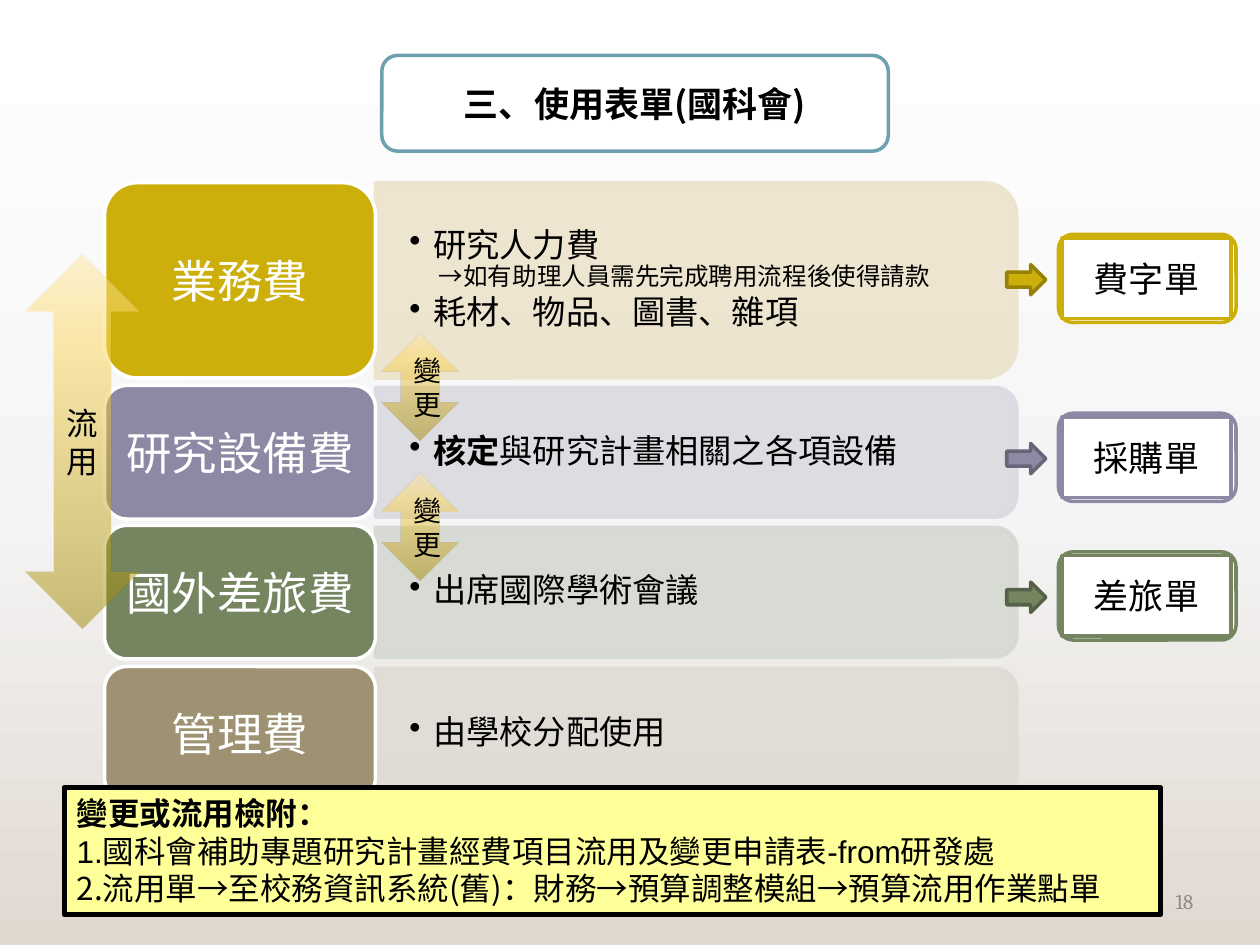
from dataclasses import dataclass

from lxml import etree
from pptx import Presentation
from pptx.dml.color import RGBColor
from pptx.enum.shapes import MSO_SHAPE
from pptx.enum.text import MSO_ANCHOR, PP_ALIGN
from pptx.oxml.ns import qn
from pptx.util import Inches, Pt

ROUNDED = MSO_SHAPE.ROUNDED_RECTANGLE
ROUND_TOP = MSO_SHAPE.ROUND_2_SAME_RECTANGLE
RECTANGLE = MSO_SHAPE.RECTANGLE
RIGHT_ARROW = MSO_SHAPE.RIGHT_ARROW
UP_DOWN_ARROW = MSO_SHAPE.UP_DOWN_ARROW
TOP, MIDDLE = MSO_ANCHOR.TOP, MSO_ANCHOR.MIDDLE
LEFT, CENTER, RIGHT = PP_ALIGN.LEFT, PP_ALIGN.CENTER, PP_ALIGN.RIGHT
BREAK = "\n"


@dataclass(frozen=True)
class Theme:
    cjk: str = "Noto Sans CJK SC"
    latin: str = "Arial"
    serif: str = "Cambria"
    black: str = "000000"
    white: str = "FFFFFF"
    title_line: str = "6EA0B0"
    note_fill: str = "FFFF99"
    page_gray: str = "8C8C8C"
    background: tuple = ((0, "FFFFFF", 100), (55, "F4F4F4", 100), (100, "E1D8D0", 100))
    transfer: tuple = ((0, "9E8700", 50), (75, "FFD757", 50), (100, "FFE7A5", 50))
    label_size: float = 26
    form_size: float = 20
    body_size: float = 19
    note_size: float = 18
    change_size: float = 16
    detail_size: float = 14
    page_size: float = 12


@dataclass(frozen=True)
class Run:
    text: str
    size: float
    font: str = Theme.cjk
    color: str = Theme.black
    bold: bool = False


class SlideBuilder:
    def __init__(self, slide, theme):
        self.slide = slide
        self.theme = theme

    def gradient(self, fill, parent, stops, angle):
        """Give a fill its own stops of position, colour and opacity in percent."""
        fill.gradient()
        fill.gradient_angle = angle
        stop_list = parent.find(".//" + qn("a:gsLst"))
        for stop in list(stop_list):
            stop_list.remove(stop)
        for position, color, opacity in stops:
            stop = etree.SubElement(stop_list, qn("a:gs"), pos=str(position * 1000))
            value = etree.SubElement(stop, qn("a:srgbClr"), val=color)
            if opacity < 100:
                etree.SubElement(value, qn("a:alpha"), val=str(opacity * 1000))

    def background(self):
        self.gradient(self.slide.background.fill, self.slide.element,
                      self.theme.background, 270)

    def shape(self, kind, box, fill, line, width=2):
        shape = self.slide.shapes.add_shape(kind, *map(Inches, box))
        shape.shadow.inherit = False
        shape.fill.solid()
        shape.fill.fore_color.rgb = RGBColor.from_string(fill)
        shape.line.color.rgb = RGBColor.from_string(line)
        shape.line.width = Pt(width)
        return shape

    def panel(self, box, color):
        """Draw a translucent panel that is rounded on its right side."""
        left, top, width, height = box
        turned = (left + (width - height) / 2, top + (height - width) / 2, height, width)
        shape = self.shape(ROUND_TOP, turned, color, color)
        shape.rotation = 90
        for value in shape.element.spPr.iter(qn("a:srgbClr")):
            etree.SubElement(value, qn("a:alpha"), val="90000")

    def transfer_arrow(self, box, text, size):
        arrow = self.slide.shapes.add_shape(UP_DOWN_ARROW, *map(Inches, box))
        arrow.shadow.inherit = False
        self.gradient(arrow.fill, arrow.element.spPr, self.theme.transfer, 90)
        arrow.line.fill.background()
        self.set_text(arrow, [[Run(text, size)]])

    def text_box(self, box, paragraphs, **style):
        shape = self.slide.shapes.add_textbox(*map(Inches, box))
        self.set_text(shape, paragraphs, **style)

    def set_text(self, shape, paragraphs, align=CENTER, anchor=MIDDLE,
                 insets=(0.1, 0.05), bullets=False):
        frame = shape.text_frame
        frame.word_wrap = True
        frame.vertical_anchor = anchor
        frame.margin_left = frame.margin_right = Inches(insets[0])
        frame.margin_top = frame.margin_bottom = Inches(insets[1])
        for index, runs in enumerate(paragraphs):
            paragraph = frame.add_paragraph() if index else frame.paragraphs[0]
            paragraph.alignment = align
            if bullets:
                self.bullet(paragraph)
            for item in runs:
                if item == BREAK:
                    paragraph.add_line_break()
                else:
                    self.add_text_run(paragraph, item)

    def bullet(self, paragraph):
        paragraph.line_spacing = 0.9
        paragraph.space_after = Pt(3)
        properties = paragraph._p.get_or_add_pPr()
        properties.set("marL", str(Inches(0.19)))
        properties.set("indent", str(-Inches(0.19)))
        etree.SubElement(properties, qn("a:buChar"), char="•")

    def add_text_run(self, paragraph, item):
        run = paragraph.add_run()
        run.text = item.text
        run.font.size = Pt(item.size)
        run.font.bold = item.bold
        run.font.name = item.font
        run.font.color.rgb = RGBColor.from_string(item.color)
        etree.SubElement(run._r.get_or_add_rPr(), qn("a:ea"), typeface=self.theme.cjk)

    def budget_row(self, top, height, color, tint, label, body):
        theme = self.theme
        inset = 0 if height > 1.5 else 0.015
        self.panel((2.98, top + inset, 5.09, height - 2 * inset), tint)
        self.text_box((2.98, top, 5.04, height), body,
                      align=LEFT, insets=(0.27, 0.1), bullets=True)
        shape = self.shape(ROUNDED, (0.83, top, 2.15, height), color, theme.white)
        self.set_text(shape, [[Run(label, theme.label_size, color=theme.white)]],
                      insets=(0, 0))

    def form(self, top, color, arrow_line, name):
        theme = self.theme
        self.shape(ROUNDED, (8.4, top, 1.41, 0.7), theme.white, color)
        card = self.shape(RECTANGLE, (8.43, top + 0.03, 1.34, 0.64), theme.white, color)
        self.set_text(card, [[Run(name, theme.form_size)]])
        self.shape(RIGHT_ARROW, (7.99, top + 0.24, 0.31, 0.24), color, arrow_line)


def main():
    presentation = Presentation()
    presentation.slide_width, presentation.slide_height = Inches(10), Inches(7.5)
    slide = presentation.slides.add_slide(presentation.slide_layouts[6])
    theme = Theme()
    builder = SlideBuilder(slide, theme)
    builder.background()

    body, note = theme.body_size, theme.note_size
    rows = [
        (1.45, 1.55, "CCAF0A", "ECE3CC", "業務費",
         [[Run("研究人力費", body), BREAK,
           Run(" →如有助理人員需先完成聘用流程後使得請款", theme.detail_size)],
          [Run("耗材、物品、圖書、雜項", body)]]),
        (3.06, 1.06, "8D89A4", "DBDAE0", "研究設備費",
         [[Run("核定", body, bold=True), Run("與研究計畫相關之各項設備", body)]]),
        (4.17, 1.06, "748560", "D6D9D2", "國外差旅費", [[Run("出席國際學術會議", body)]]),
        (5.29, 1.06, "9E9273", "DFDCD5", "管理費", [[Run("由學校分配使用", body)]]),
    ]
    for row in rows:
        builder.budget_row(*row)

    forms = [
        (1.86, "CCAF0A", "978107", "費字單"),
        (3.28, "8D89A4", "686579", "採購單"),
        (4.38, "748560", "566247", "差旅單"),
    ]
    for form in forms:
        builder.form(*form)

    builder.transfer_arrow((0.2, 2.02, 0.91, 2.97), "流用", note)
    note_box = builder.shape(RECTANGLE, (0.51, 6.25, 8.7, 1.01),
                             theme.note_fill, theme.black, 3)
    builder.set_text(note_box, [
        [Run("變更或流用檢附：", note, theme.latin, bold=True), BREAK,
         Run("1.國科會補助專題研究計畫經費項目流用及變更申請表-from研發處", note, theme.latin)],
        [Run("2.流用單→至校務資訊系統(舊)：財務→預算調整模組→預算流用作業點單", note)],
    ], align=LEFT, anchor=TOP)

    for top in (2.65, 3.76):
        builder.transfer_arrow((3.03, top, 0.61, 0.85), "變更", theme.change_size)

    title = builder.shape(ROUNDED, (3.03, 0.44, 4.02, 0.76), theme.white, theme.title_line)
    builder.set_text(title, [[Run("三、使用表單(國科會)", theme.form_size, bold=True)]])
    builder.text_box((7.17, 6.95, 2.4, 0.4),
                     [[Run("18", theme.page_size, theme.serif, theme.page_gray)]], align=RIGHT)
    presentation.save("out.pptx")


if __name__ == "__main__":
    main()
